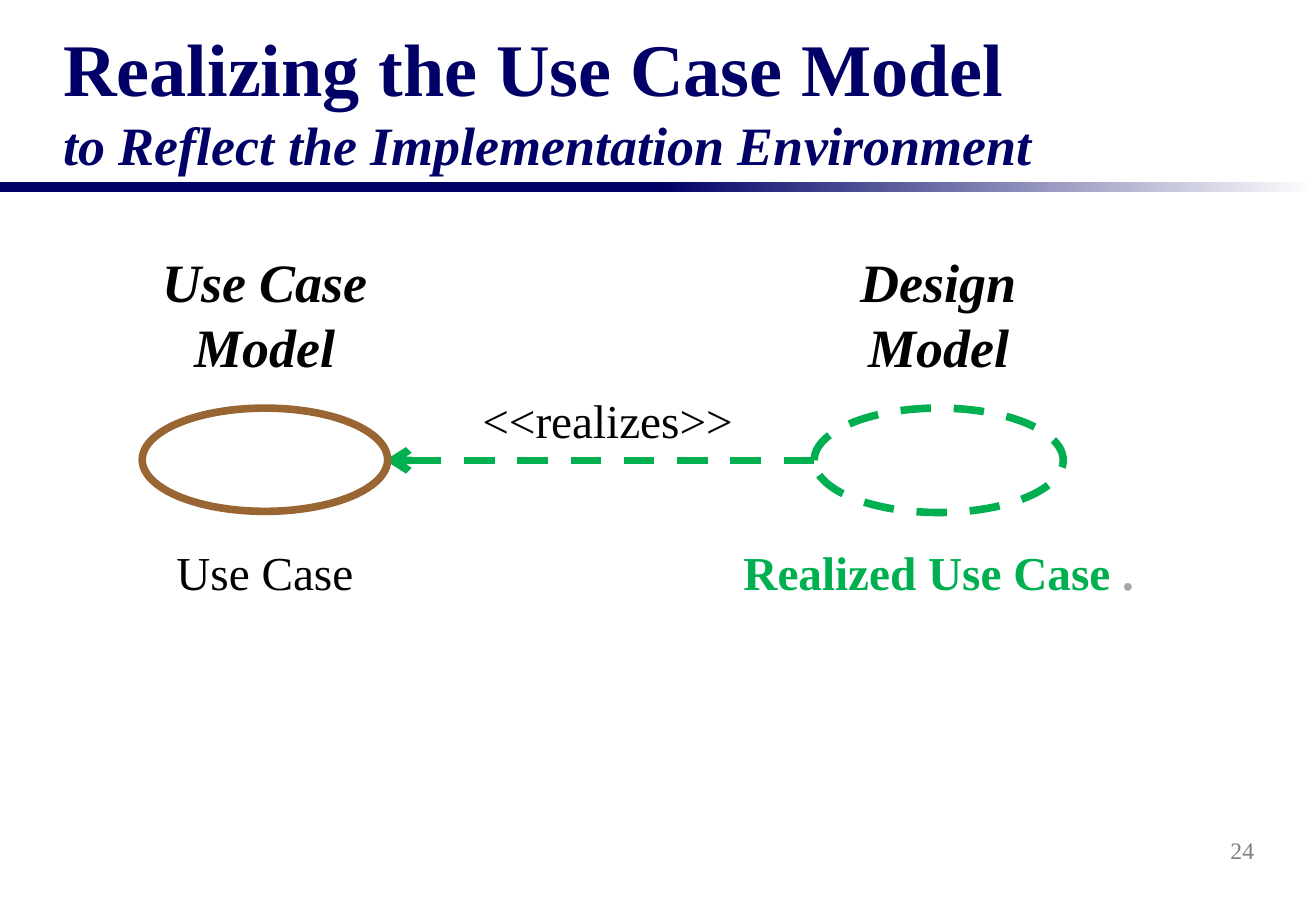
"""Build the slide on realizing the use case model in the implementation environment."""
from dataclasses import dataclass

from lxml import etree
from pptx import Presentation
from pptx import util as u
from pptx.dml.color import RGBColor
from pptx.enum import dml, shapes, text
from pptx.oxml.ns import qn

PX = 9144
FONT = "Times New Roman"
COLOURS = {
    "navy": "000066",
    "white": "FFFFFF",
    "black": "000000",
    "brown": "996633",
    "green": "00B050",
    "grey": "808080",
    "silver": "A6A6A6",
}


@dataclass(frozen=True)
class Box:
    left: int
    top: int
    width: int
    height: int

    def emu(self) -> tuple[int, ...]:
        return tuple(v * PX for v in (self.left, self.top, self.width, self.height))


@dataclass(frozen=True)
class Run:
    text: str
    size: int = 28
    colour: str = "black"
    bold: bool = False
    italic: bool = False


@dataclass(frozen=True)
class Label:
    box: Box
    runs: tuple[Run, ...]
    align: text.PP_ALIGN = text.PP_ALIGN.CENTER
    anchor: text.MSO_ANCHOR = text.MSO_ANCHOR.TOP
    wrap: bool = False


@dataclass(frozen=True)
class Oval:
    box: Box
    colour: str
    dashed: bool = False


LABELS = (
    Label(Box(122, 200, 192, 117), (Run("Use Case Model", 32, bold=True, italic=True),), wrap=True),
    Label(Box(693, 200, 159, 117), (Run("Design Model", 32, bold=True, italic=True),), wrap=True),
    Label(Box(383, 317, 234, 57), (Run("<<realizes>>"),), wrap=True),
    Label(Box(135, 442, 166, 57), (Run("Use Case"),)),
    Label(Box(600, 442, 345, 57), (Run("Realized Use Case ", colour="green", bold=True),
                                   Run(".", colour="silver", bold=True))),
    Label(Box(816, 675, 226, 50), (Run("24", 14, "grey"),),
          text.PP_ALIGN.RIGHT, text.MSO_ANCHOR.MIDDLE),
)
OVALS = (
    Oval(Box(117, 336, 202, 85), "brown"),
    Oval(Box(670, 336, 205, 86), "green", dashed=True),
)


def rgb(name: str) -> RGBColor:
    return RGBColor.from_string(COLOURS[name])


def write(paragraph, content: str, *, size: int, colour: str,
          bold: bool = False, italic: bool = False) -> None:
    run = paragraph.add_run()
    run.text = content
    font = run.font
    font.name, font.size, font.bold, font.italic = FONT, u.Pt(size), bold, italic
    font.color.rgb = rgb(colour)


def style_line(line, colour: str, dashed: bool) -> None:
    line.color.rgb = rgb(colour)
    line.width = u.Pt(4.5)
    if dashed:
        line.dash_style = dml.MSO_LINE.DASH


def add_plain_shape(slide, kind: shapes.MSO_SHAPE, box: Box):
    shape = slide.shapes.add_shape(kind, *box.emu())
    shape.shadow.inherit = False
    return shape


def add_title_rule(slide) -> None:
    solid, fade = (add_plain_shape(slide, shapes.MSO_SHAPE.RECTANGLE, Box(left, 150, 542, 8))
                   for left in (0, 541))
    solid.fill.solid()
    solid.fill.fore_color.rgb = rgb("navy")
    fade.fill.gradient()
    fade.fill.gradient_angle = 0
    for stop, colour in zip(fade.fill.gradient_stops, ("navy", "white")):
        stop.color.rgb = rgb(colour)
    for bar in (solid, fade):
        bar.line.fill.background()


def fill_title(slide) -> None:
    title = slide.shapes.title
    title.left, title.top, title.width, title.height = Box(42, 33, 1000, 117).emu()
    frame = title.text_frame
    frame.word_wrap = True
    frame.auto_size = text.MSO_AUTO_SIZE.NONE
    frame.vertical_anchor = text.MSO_ANCHOR.BOTTOM
    paragraph = frame.paragraphs[0]
    paragraph.alignment = text.PP_ALIGN.LEFT
    write(paragraph, "Realizing the Use Case Model", size=44, colour="navy", bold=True)
    paragraph.add_line_break()
    write(paragraph, "to Reflect the Implementation Environment",
          size=32, colour="navy", bold=True, italic=True)


def add_label(slide, label: Label) -> None:
    frame = slide.shapes.add_textbox(*label.box.emu()).text_frame
    frame.word_wrap = label.wrap
    frame.vertical_anchor = label.anchor
    paragraph = frame.paragraphs[0]
    paragraph.alignment = label.align
    for run in label.runs:
        write(paragraph, run.text, size=run.size, colour=run.colour,
              bold=run.bold, italic=run.italic)


def add_oval(slide, oval: Oval) -> None:
    shape = add_plain_shape(slide, shapes.MSO_SHAPE.OVAL, oval.box)
    shape.fill.background()
    style_line(shape.line, oval.colour, oval.dashed)


def add_realizes_arrow(slide) -> None:
    start, end, y = 670 * PX, 317 * PX, 379 * PX
    arrow = slide.shapes.add_connector(shapes.MSO_CONNECTOR.STRAIGHT, start, y, end, y)
    style_line(arrow.line, "green", True)
    etree.SubElement(arrow.line._get_or_add_ln(), qn("a:tailEnd"), type="arrow")
    etree.SubElement(arrow._element.spPr, qn("a:effectLst"))


def main() -> None:
    presentation = Presentation()
    presentation.slide_width, presentation.slide_height = 1083 * PX, 750 * PX
    slide = presentation.slides.add_slide(presentation.slide_layouts[5])
    add_title_rule(slide)
    fill_title(slide)
    add_realizes_arrow(slide)
    for oval in OVALS:
        add_oval(slide, oval)
    for label in LABELS:
        add_label(slide, label)
    presentation.save("out.pptx")


if __name__ == "__main__":
    main()
